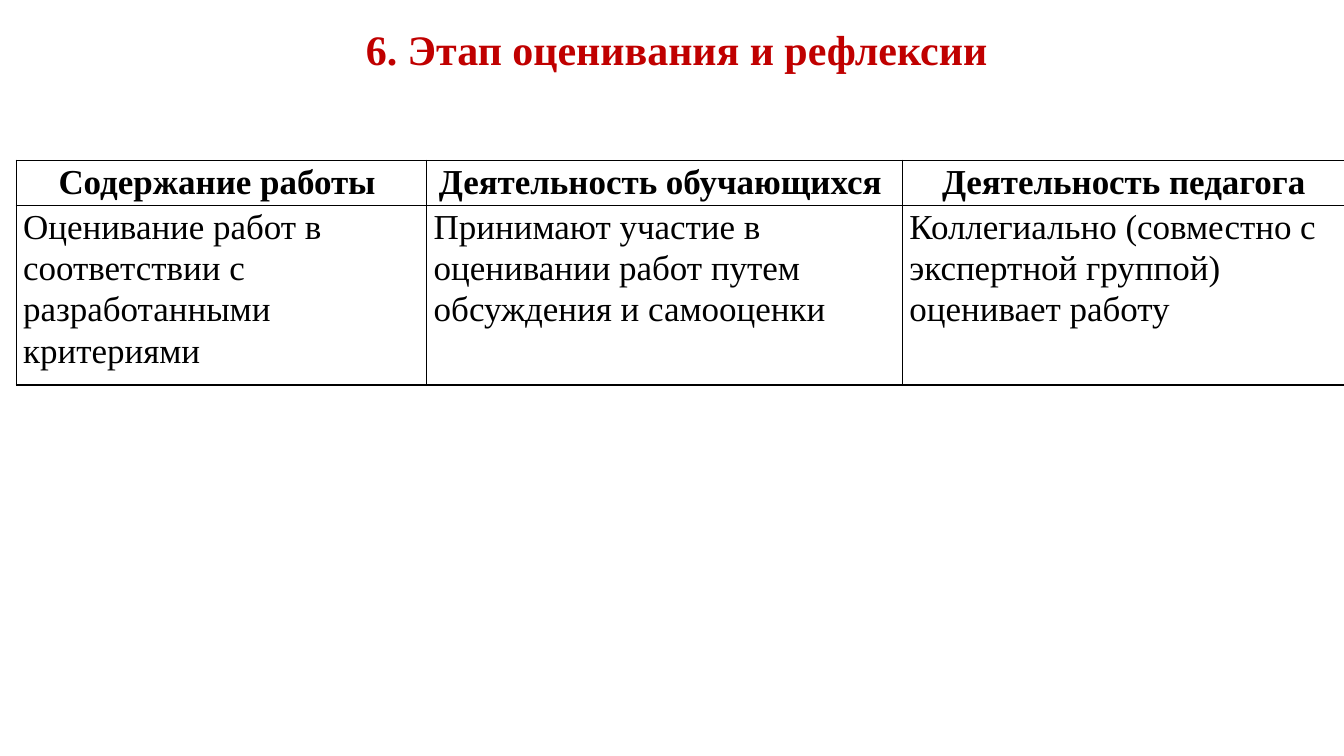
import pptx
import pptx.dml.color
import pptx.enum.text
import pptx.oxml
import pptx.oxml.ns
import pptx.util
from lxml import etree

Inches = pptx.util.Inches
Pt = pptx.util.Pt
ALIGN = pptx.enum.text.PP_ALIGN

RED = pptx.dml.color.RGBColor(0xC0, 0x00, 0x00)
BLACK = pptx.dml.color.RGBColor(0x00, 0x00, 0x00)

SLIDE_WIDTH, SLIDE_HEIGHT = 13.33, 7.5
TITLE_BOX = (3.53, 0.18, 6.43, 0.61)
TABLE_BOX = (0.16, 1.59, 13.18, 2.21)
COLUMN_SHARES = (0.309, 0.358, 0.333)
ROW_SHARES = (0.2, 0.8)

FONT = "Times New Roman"
TITLE_FORMAT = {"name": FONT, "size": Pt(30), "bold": True}
HEADER_FORMAT = {"name": FONT, "size": Pt(25), "bold": True}
BODY_FORMAT = {"name": FONT, "size": Pt(25), "bold": False}
CELL_FORMAT = {
    "margin_left": Inches(0.07),
    "margin_right": Inches(0.07),
    "margin_top": 0,
    "margin_bottom": 0,
}

TITLE = "6. Этап оценивания и рефлексии"
ROWS = (
    ("Содержание работы ", "Деятельность обучающихся ", "Деятельность педагога"),
    (
        "Оценивание работ в соответствии с разработанными критериями",
        "Принимают участие в оценивании работ путем обсуждения и самооценки",
        "Коллегиально (совместно с экспертной группой) оценивает работу",
    ),
)


def set_values(target, values):
    for name, value in values.items():
        setattr(target, name, value)


def write(para, text, values, color):
    span = para.add_run()
    span.text = text
    set_values(span.font, values)
    span.font.color.rgb = color


def add_borders(cell, width, color):
    """Draw a solid line on all four sides of a cell."""
    properties = cell._tc.get_or_add_tcPr()
    for index, side in enumerate(("lnL", "lnR", "lnT", "lnB")):
        line = etree.Element(pptx.oxml.ns.qn(f"a:{side}"), w=str(width))
        fill = etree.SubElement(line, pptx.oxml.ns.qn("a:solidFill"))
        etree.SubElement(fill, pptx.oxml.ns.qn("a:srgbClr"), val=str(color))
        properties.insert(index, line)


def add_title(page, box):
    frame = page.shapes.add_textbox(*map(Inches, box)).text_frame
    frame.word_wrap = False
    frame.auto_size = pptx.enum.text.MSO_AUTO_SIZE.SHAPE_TO_FIT_TEXT
    write(frame.paragraphs[0], TITLE, TITLE_FORMAT, RED)


def add_stage_table(page, box):
    left, top, width, height = box
    table = page.shapes.add_table(
        len(ROWS), len(COLUMN_SHARES), *map(Inches, box)
    ).table
    for column, share in zip(table.columns, COLUMN_SHARES):
        column.width = Inches(width * share)
    for row, share in zip(table.rows, ROW_SHARES):
        row.height = Inches(height * share)

    for row_index, texts in enumerate(ROWS):
        is_header = row_index == 0
        for column_index, text in enumerate(texts):
            cell = table.cell(row_index, column_index)
            set_values(cell, CELL_FORMAT)
            cell.fill.background()
            add_borders(cell, Pt(1), BLACK)
            para = cell.text_frame.paragraphs[0]
            para.alignment = ALIGN.CENTER if is_header else ALIGN.LEFT
            para.line_spacing = 1.07
            write(para, text, HEADER_FORMAT if is_header else BODY_FORMAT, BLACK)


def main():
    deck = pptx.Presentation()
    deck.slide_width = Inches(SLIDE_WIDTH)
    deck.slide_height = Inches(SLIDE_HEIGHT)
    page = deck.slides.add_slide(deck.slide_layouts[6])
    add_title(page, TITLE_BOX)
    add_stage_table(page, TABLE_BOX)
    deck.save("out.pptx")


if __name__ == "__main__":
    main()
